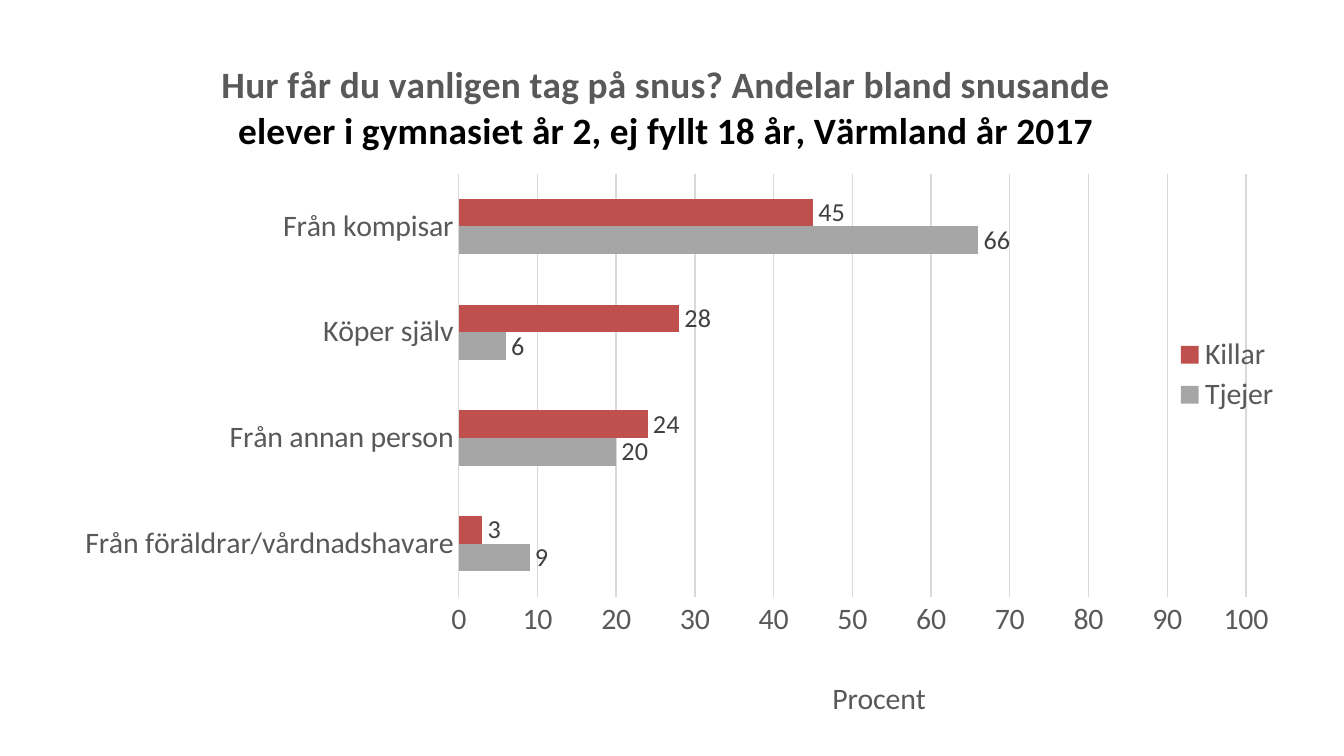
from lxml import etree
from pptx import Presentation
from pptx.chart.data import CategoryChartData
from pptx.dml.color import RGBColor
from pptx.enum.chart import XL_CHART_TYPE, XL_LABEL_POSITION, XL_LEGEND_POSITION, XL_TICK_MARK
from pptx.oxml.ns import qn
from pptx.util import Cm, Pt

BAR_CLUSTERED = XL_CHART_TYPE.BAR_CLUSTERED
OUTSIDE_END = XL_LABEL_POSITION.OUTSIDE_END
LEGEND_RIGHT = XL_LEGEND_POSITION.RIGHT
NO_TICKS = XL_TICK_MARK.NONE

BLACK = RGBColor(0x00, 0x00, 0x00)
DARK_GREY = RGBColor(0x40, 0x40, 0x40)
TEXT_GREY = RGBColor(0x59, 0x59, 0x59)
GRID_GREY = RGBColor(0xD9, 0xD9, 0xD9)
BAR_GREY = RGBColor(0xA6, 0xA6, 0xA6)
BAR_RED = RGBColor(0xC0, 0x50, 0x4D)


def style_text(font, text=None, size=16, color=TEXT_GREY, bold=False, paragraph=None):
    """Format a font; with a paragraph, write text there as a run first."""
    if paragraph is not None:
        run = paragraph.add_run()
        run.text = text
        font = run.font
    font.name = "Calibri"
    font.size = Pt(size)
    font.bold = bold
    font.color.rgb = color


def place(part, index, **fractions):
    """Set a manual layout, in fractions of the chart, as child number index."""
    for old_layout in part.findall(qn("c:layout")):
        part.remove(old_layout)
    layout = etree.Element(qn("c:layout"))
    manual = etree.SubElement(layout, qn("c:manualLayout"))
    for tag, value in fractions.items():
        etree.SubElement(manual, qn(f"c:{tag}")).set("val", str(value))
    part.insert(index, layout)


prs = Presentation()
prs.slide_width = Cm(25.4)
prs.slide_height = Cm(14.29)
slide = prs.slides.add_slide(prs.slide_layouts[6])

# Chart data, from the bottom bar group upwards
answers = CategoryChartData(number_format="0")
answers.categories = [
    "Från föräldrar/vårdnadshavare", "Från annan person", "Köper själv", "Från kompisar",
]
answers.add_series("Tjejer", (9, 20, 6, 66))
answers.add_series("Killar", (3, 24, 28, 45))
chart = slide.shapes.add_chart(
    BAR_CLUSTERED, Cm(0.51), Cm(0.53), Cm(24), Cm(13.21), answers
).chart
style_text(chart.font, size=12, color=BLACK)

# Title
heading = chart.chart_title.text_frame
style_text(None, "Hur får du vanligen tag på snus? Andelar bland snusande",
           size=20, bold=True, paragraph=heading.paragraphs[0])
style_text(None, "elever i gymnasiet år 2, ej fyllt 18 år, Värmland år 2017",
           size=20, color=BLACK, bold=True, paragraph=heading.add_paragraph())
chart.chart_title.include_in_layout = False

# Bars and their labels
bars = chart.plots[0]
bars.gap_width = 182
bars.overlap = 0
bars.vary_by_categories = False
for group, color in zip(bars.series, (BAR_GREY, BAR_RED)):
    group.format.fill.solid()
    group.format.fill.fore_color.rgb = color
    group.invert_if_negative = False
    labels = group.data_labels
    labels.show_value = True
    labels.position = OUTSIDE_END
    labels.number_format = "0"
    labels.number_format_is_linked = False
    style_text(labels.font, size=14, color=DARK_GREY)

# Axes
answer_axis, percent_axis = chart.category_axis, chart.value_axis
for axis in (answer_axis, percent_axis):
    axis.major_tick_mark = NO_TICKS
    axis.minor_tick_mark = NO_TICKS
    style_text(axis.tick_labels.font)
answer_axis.has_major_gridlines = False
percent_axis.has_major_gridlines = True
for line in (answer_axis.format.line, percent_axis.major_gridlines.format.line):
    line.color.rgb = GRID_GREY
    line.width = Pt(0.75)
percent_axis.format.line.fill.background()
percent_axis.minimum_scale = 0
percent_axis.maximum_scale = 100
percent_axis.major_unit = 10
percent_axis.tick_labels.number_format = "0"
percent_axis.tick_labels.number_format_is_linked = False
percent_title = percent_axis.axis_title
style_text(None, "Procent", paragraph=percent_title.text_frame.paragraphs[0])

# Legend, laid over the plot
chart.has_legend = True
chart.legend.position = LEGEND_RIGHT
chart.legend.include_in_layout = True
style_text(chart.legend.font)

# Positions within the chart
plot_area = chart.plots[0]._element.getparent()
place(plot_area, 0, layoutTarget="inner", xMode="edge", yMode="edge",
      x=0.34, y=0.21, w=0.62, h=0.61)
place(chart.chart_title._element, 1, xMode="edge", yMode="edge", x=0.15, y=0.04)
place(percent_title._element, 1, xMode="edge", yMode="edge", x=0.63, y=0.93)
place(chart.legend._element, 1, xMode="edge", yMode="edge", x=0.9, y=0.44, w=0.09, h=0.12)

prs.save("out.pptx")
